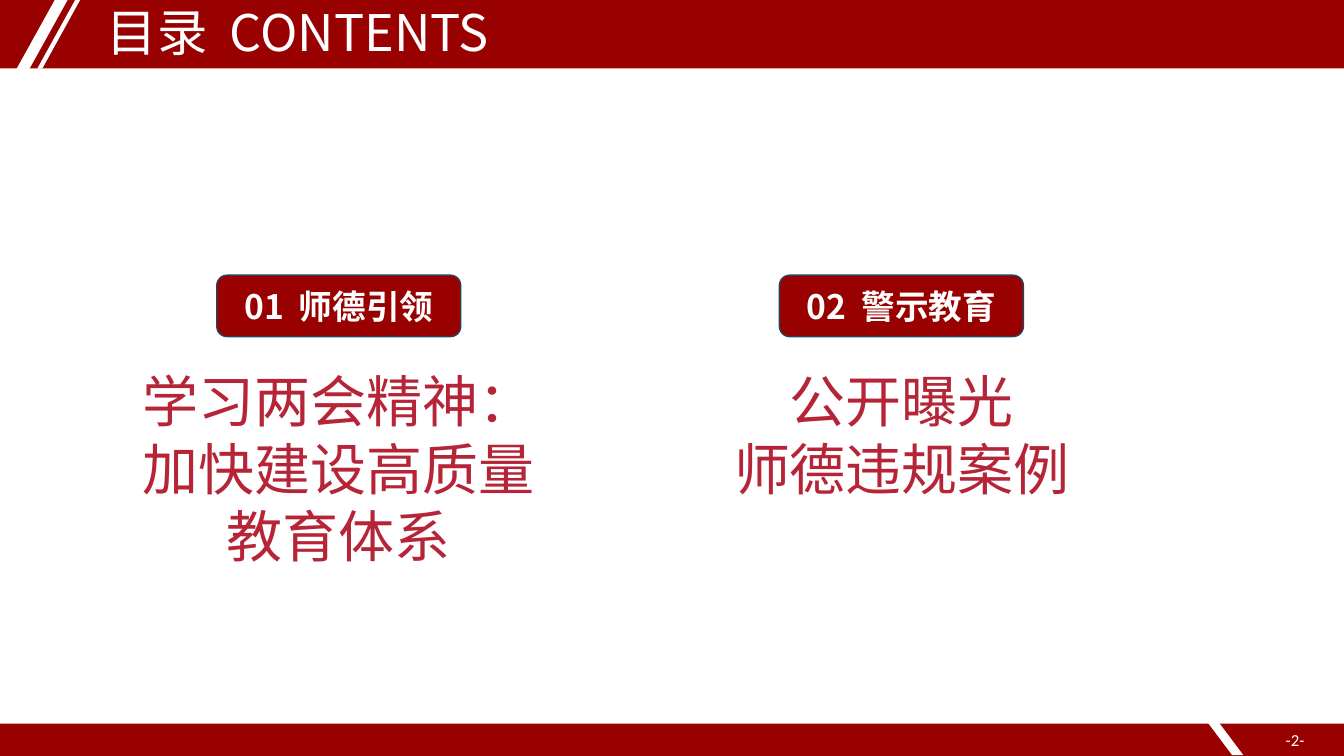
from pptx import Presentation
from pptx.dml.color import RGBColor
from pptx.enum import shapes, text
from pptx.util import Inches, Pt

RED = RGBColor(0x99, 0x00, 0x00)
CRIMSON = RGBColor(0xB6, 0x25, 0x37)
NAVY = RGBColor(0x28, 0x44, 0x5D)
WHITE = RGBColor(0xFF, 0xFF, 0xFF)
CJK = "Noto Sans CJK SC"

# Content
TITLE = "目录 CONTENTS"
PAGE = "-2-"
# (label, label left, lines, box left, box width, box height)
SECTIONS = [
    ("01 师德引领", 2.15, ["学习两会精神：加快建设高质量教育体系"], 1.31, 4.1, 2.12),
    ("02 警示教育", 7.73, ["公开曝光", "师德违规案例"], 6.4, 5.09, 1.45),
]
BARS = [(0, 0, 13.33, 0.68), (0, 7.18, 13.33, 0.32)]
# (left, top, width, height, slant, rotation)
STRIPES = [
    (11.98, 7.17, 0.35, 0.32, 0.75, 180),
    (0.16, 0, 0.51, 0.69, 0.75, 180),
    (0.37, -0.01, 0.43, 0.69, 0.885, 180),
]

prs = Presentation()
prs.slide_width, prs.slide_height = Inches(13.33), Inches(7.5)
s = prs.slides.add_slide(prs.slide_layouts[6])


def add_shape(kind, box, fill, line=None):
    sp = s.shapes.add_shape(kind, *map(Inches, box))
    sp.shadow.inherit = False
    sp.fill.solid()
    sp.fill.fore_color.rgb = fill
    if line is None:
        sp.line.fill.background()
    else:
        sp.line.color.rgb = line
        sp.line.width = Pt(1)
    return sp


def write(sp, lines, size, color=WHITE, font=CJK, bold=False,
          align=text.PP_ALIGN.CENTER, anchor=text.MSO_ANCHOR.TOP, spacing=None):
    tf = sp.text_frame
    tf.word_wrap = True
    tf.vertical_anchor = anchor
    for i, line in enumerate(lines):
        p = tf.paragraphs[0] if i == 0 else tf.add_paragraph()
        p.alignment = align
        if spacing:
            p.line_spacing = spacing
        before, space, after = line.partition(" ")
        for part in filter(None, (before, space, after)):
            r = p.add_run()
            r.text = part
            r.font.size, r.font.bold, r.font.name = Pt(size), bold, font
            r.font.color.rgb = color
            rPr = r.font._element
            ea = rPr.makeelement(rPr.tag.replace("rPr", "ea"), {"typeface": font})
            rPr.append(ea)
            if part == " ":  # widen the word gap by tracking
                rPr.set("spc", str(round(size * 22)))


def add_text(box, lines, size, **fmt):
    write(s.shapes.add_textbox(*map(Inches, box)), lines, size, **fmt)


# Header and footer bands with slanted stripes
for bar in BARS:
    add_shape(shapes.MSO_SHAPE.RECTANGLE, bar, RED)
for i, (*box, slant, rotation) in enumerate(STRIPES):
    sp = add_shape(shapes.MSO_SHAPE.PARALLELOGRAM, box, WHITE)
    sp.adjustments[0] = slant
    sp.rotation = rotation
    if i == 0:  # the footer stripe leans the other way
        sp._element.spPr.xfrm.set("flipH", "1")

add_text((12.49, 7.19, 0.71, 0.4), [PAGE], 12, font="Calibri")
add_text((0.96, 0.03, 10.07, 0.59), [TITLE], 36,
         align=text.PP_ALIGN.LEFT, spacing=0.9)

# Sections: label above its description
for label, label_left, lines, left, width, height in SECTIONS:
    add_text((left, 3.59, width, height), lines, 40, color=CRIMSON)
    sp = add_shape(shapes.MSO_SHAPE.ROUNDED_RECTANGLE,
                   (label_left, 2.73, 2.42, 0.61), RED, NAVY)
    write(sp, [label], 24, bold=True, anchor=text.MSO_ANCHOR.MIDDLE)

prs.save("out.pptx")
